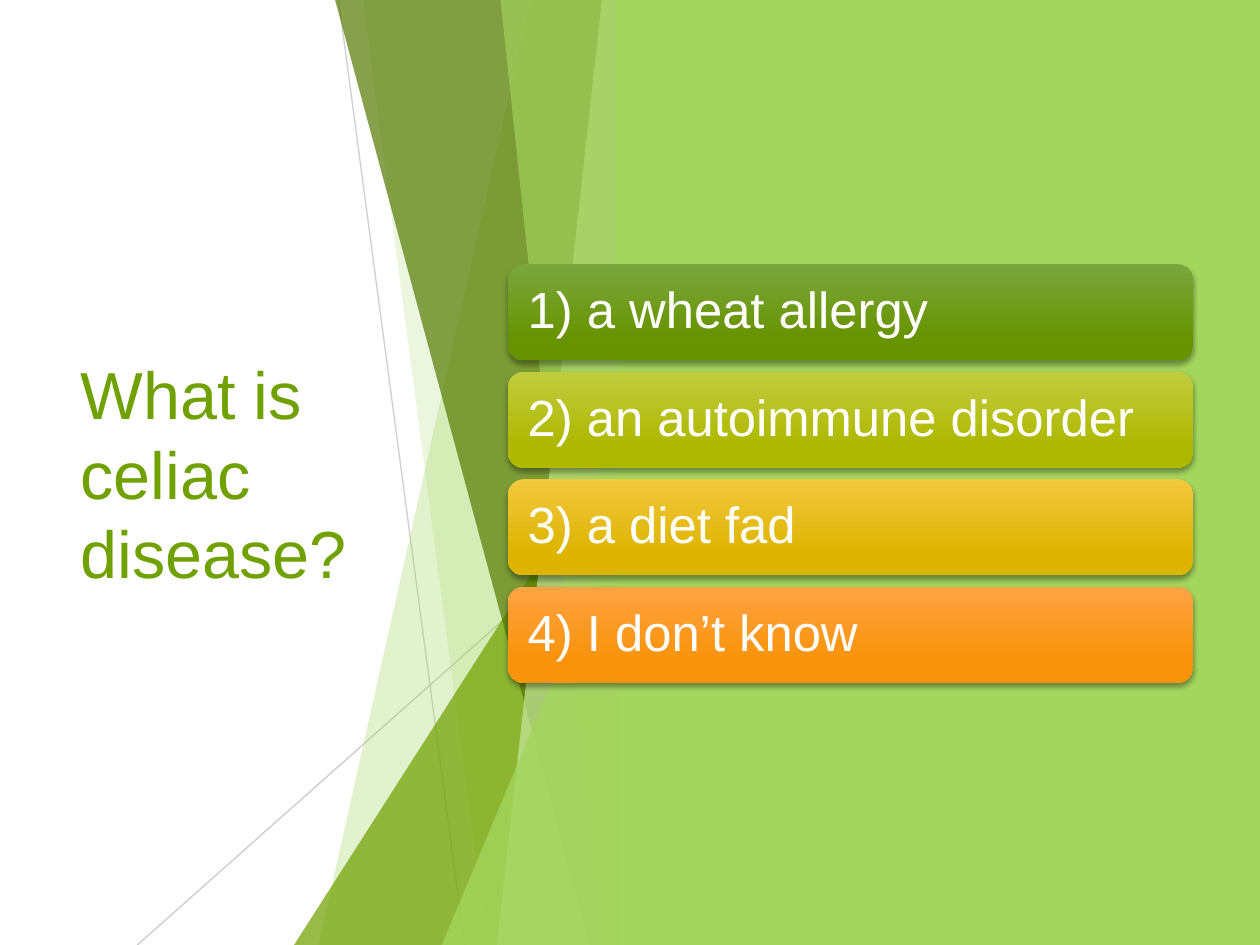
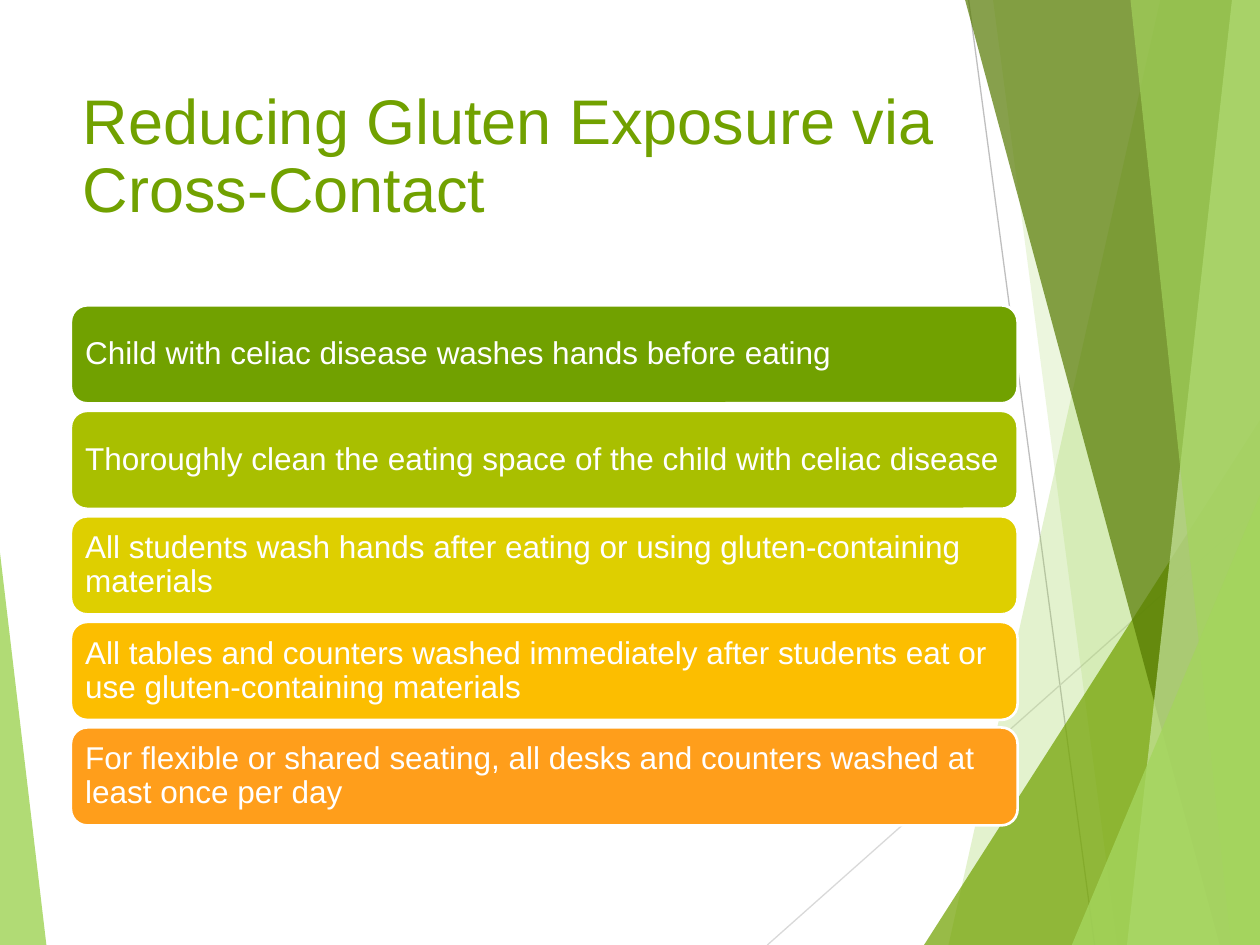
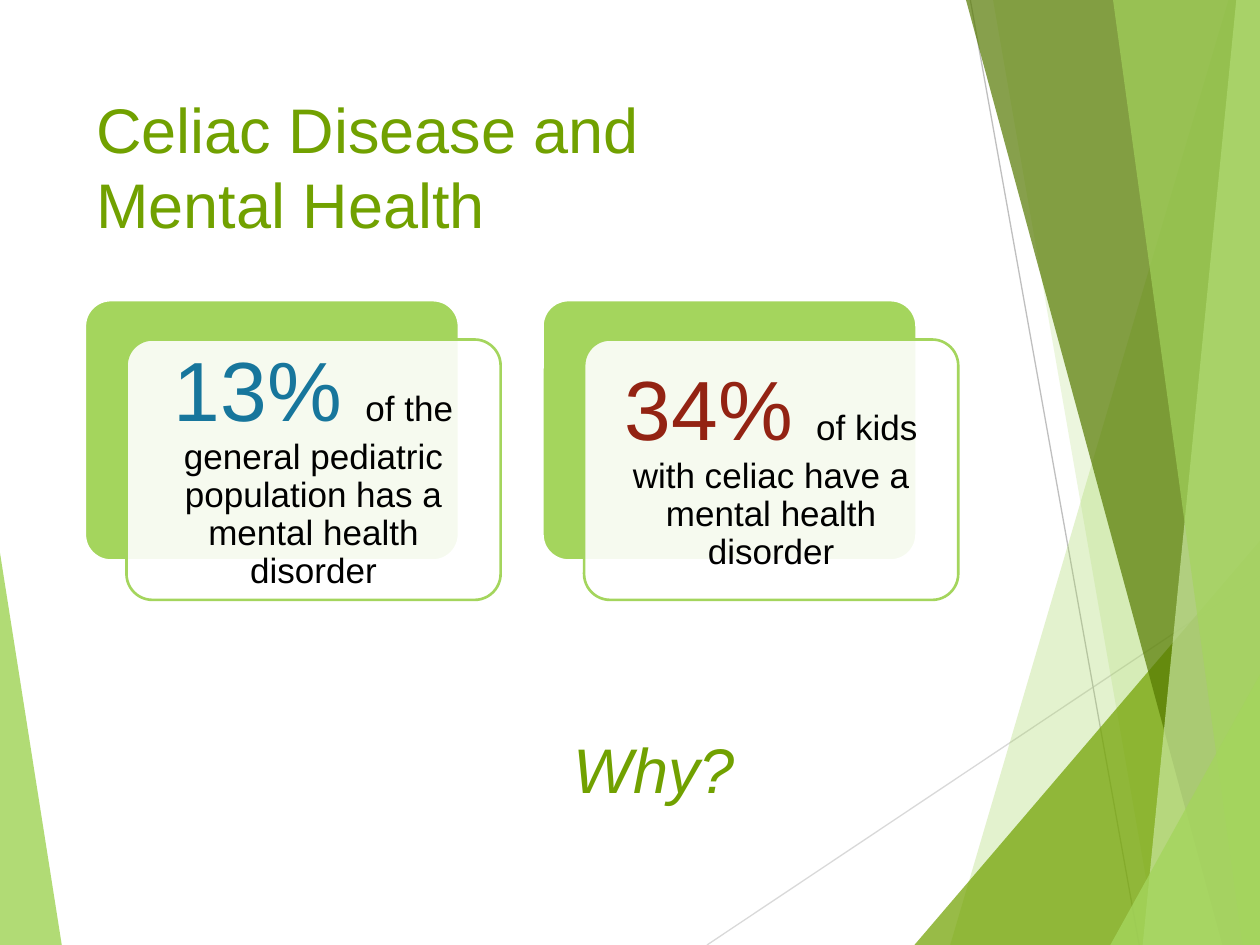
from dataclasses import dataclass
from typing import Any, Optional, Union

import pptx
import pptx.dml.color
import pptx.enum.shapes
import pptx.enum.text
import pptx.oxml
import pptx.oxml.ns
import pptx.util

Pt = pptx.util.Pt
SHAPES = pptx.enum.shapes.MSO_SHAPE
ANCHOR = pptx.enum.text.MSO_ANCHOR
ALIGN = pptx.enum.text.PP_ALIGN

COLORS = {
    "white": "FFFFFF", "black": "000000", "silver": "D9D9D9", "gray": "BFBFBF",
    "green": "71A100", "lime": "A4D55D", "pale": "C8E69E", "olive": "557900",
    "moss": "A9BF00", "yellow": "DECF00", "amber": "FCBE00", "orange": "FF9E1B",
    "blue": "17769C", "red": "932313",
    "green top": "7BA63F", "green base": "679300",
    "moss top": "C1CC3F", "moss base": "AEB800",
    "amber top": "F2C83F", "amber base": "DDB400",
    "orange top": "FFA343", "orange base": "F8930A",
}
FONT = "Arial"
WIDTH, HEIGHT = 720, 540
HALF = WIDTH / 2
DEFAULT_INSETS = (7.2, 3.6)


@dataclass(frozen=True)
class Box:
    left: float
    top: float
    width: float
    height: float

    def lengths(self, dx: float = 0) -> tuple:
        return tuple(Pt(n) for n in (self.left + dx, self.top, self.width, self.height))


@dataclass(frozen=True)
class Ray:
    start: tuple
    end: tuple
    color: str
    opacity: int = 100


@dataclass(frozen=True)
class Facet:
    points: tuple
    color: str
    opacity: int


@dataclass(frozen=True)
class Peak:
    box: Box
    apex: float
    color: str
    opacity: int


@dataclass(frozen=True)
class Span:
    text: str
    size: float
    color: str
    italic: bool = False


@dataclass(frozen=True)
class CardStack:
    first: Box
    pitch: float
    inset: float
    size: float


Part = Union[Ray, Facet, Peak]


def band(top_left: float, bottom_left: float, color: str, opacity: int) -> Facet:
    """A facet that runs from a slanted left edge to the right page edge."""
    points = ((top_left, 0), (WIDTH, 0), (WIDTH, HEIGHT), (bottom_left, HEIGHT))
    return Facet(points, color, opacity)


def facets(green: Part, lime: Part, slants: tuple) -> list[Part]:
    wide, light, dark, pale, front = slants
    return [
        band(*wide, "lime", 30), band(*light, "lime", 20), green,
        band(*dark, "olive", 70), band(*pale, "pale", 70),
        band(*front, "lime", 65), lime,
    ]


FAN = facets(
    Peak(Box(528, 240, 192, 300), 1, "green", 72),
    Peak(Box(612.5, 283, 107.5, 257), 1, "lime", 80),
    ((663, 542), (567.5, 638.5), (551.5, 697), (704, 644), (646, 703.5)),
)
EDGE_FAN = facets(
    Facet(((WIDTH, 309), (WIDTH, HEIGHT), (522.5, HEIGHT)), "green", 72),
    Facet(((WIDTH, 385.5), (WIDTH, HEIGHT), (634.5, HEIGHT)), "lime", 80),
    ((702, 543), (567.5, 661.5), (552, 698.5), (706.5, 653), (636, 710)),
)


def fan_rays(colors: tuple, opacities: tuple = (100, 100)) -> list[Part]:
    return [
        Ray((553.5, 0), (625.5, HEIGHT), colors[0], opacities[0]),
        Ray((WIDTH, 290), (438.5, HEIGHT), colors[1], opacities[1]),
    ]


QUESTION_ART = fan_rays(("gray", "gray"), (75, 80)) + FAN
CONTACT_ART = fan_rays(("gray", "silver")) + FAN + [
    Peak(Box(0, 316, 26.5, 224), 0, "lime", 85)]
HEALTH_ART = [
    Facet(((0, 316), (35.3, HEIGHT), (0, HEIGHT)), "lime", 85),
    Ray((404, HEIGHT), (WIDTH, 329), "silver"),
    Ray((554.5, 0), (651, HEIGHT), "gray"),
] + EDGE_FAN

ANSWERS = [
    ("1) a wheat allergy", "green"),
    ("2) an autoimmune disorder", "moss"),
    ("3) a diet fad", "amber"),
    ("4) I don’t know", "orange"),
]
PRECAUTIONS = [
    ("Child with celiac disease washes hands before eating", "green"),
    ("Thoroughly clean the eating space of the child with celiac disease", "moss"),
    ("All students wash hands after eating or using gluten-containing materials", "yellow"),
    ("All tables and counters washed immediately after students eat or use "
     "gluten-containing materials", "amber"),
    ("For flexible or shared seating, all desks and counters washed at least "
     "once per day", "orange"),
]
RATES = [
    ("13% ", "blue",
     "of the general pediatric population has a mental health disorder"),
    ("34% ", "red", "of kids with celiac have a mental health disorder"),
]
ANSWER_STACK = CardStack(Box(290.2, 151, 391.7, 55), 61.4, 8.7, 29)
PRECAUTION_STACK = CardStack(Box(40.5, 174.5, 541, 56), 60.3, 5.4, 18)


def rgb(name: str) -> pptx.dml.color.RGBColor:
    return pptx.dml.color.RGBColor.from_string(COLORS[name])


def apply_format(target: Any, values: dict) -> None:
    for name, value in values.items():
        setattr(target, name, value)


def set_opacity(shape: Any, parent: str, percent: int) -> None:
    """Fade the solid colour found below the given element path."""
    if percent < 100:
        color = shape._element.xpath(f"./{parent}/a:solidFill/a:srgbClr")[0]
        alpha = pptx.oxml.ns.qn("a:alpha")
        color.makeelement(alpha, {})
        pptx_alpha = pptx.oxml.parse_xml(
            f'<a:alpha {pptx.oxml.ns.nsdecls("a")} val="{percent * 1000}"/>')
        color.append(pptx_alpha)


def paint(shape: Any, color: str, opacity: int = 100, outline: Optional[str] = None) -> None:
    shape.shadow.inherit = False
    shape.fill.solid()
    shape.fill.fore_color.rgb = rgb(color)
    set_opacity(shape, "p:spPr", opacity)
    if outline:
        shape.line.color.rgb = rgb(outline)
        shape.line.width = Pt(1.5)
    else:
        shape.line.fill.background()


def paint_glossy(shape: Any, color: str) -> None:
    """Fill from a light top to a deep base, with a soft shadow below."""
    shape.line.fill.background()
    shape.fill.gradient()
    shape.fill.gradient_angle = 270
    for stop, tone, position in zip(shape.fill.gradient_stops, ("top", "base"), (0, 0.78)):
        stop.color.rgb = rgb(f"{color} {tone}")
        stop.position = position
    shape.shadow.inherit = False
    effects = shape._element.xpath("./p:spPr/a:effectLst")[0]
    effects.append(pptx.oxml.parse_xml(
        f'<a:outerShdw {pptx.oxml.ns.nsdecls("a")} blurRad="{Pt(3)}" dist="{Pt(2)}" '
        'dir="5400000" rotWithShape="0"><a:srgbClr val="000000">'
        '<a:alpha val="35000"/></a:srgbClr></a:outerShdw>'))


def draw_ray(page: Any, ray: Ray, dx: float) -> None:
    (x1, y1), (x2, y2) = ray.start, ray.end
    line = page.shapes.add_connector(
        pptx.enum.shapes.MSO_CONNECTOR.STRAIGHT,
        Pt(x1 + dx), Pt(y1), Pt(x2 + dx), Pt(y2))
    line.line.color.rgb = rgb(ray.color)
    line.line.width = Pt(0.75)
    set_opacity(line, "p:spPr/a:ln", ray.opacity)
    line._element.spPr.append(pptx.oxml.parse_xml(
        f'<a:effectLst {pptx.oxml.ns.nsdecls("a")}/>'))


def draw_art(page: Any, parts: list[Part], dx: float = 0) -> None:
    for part in parts:
        if isinstance(part, Ray):
            draw_ray(page, part, dx)
            continue
        if isinstance(part, Peak):
            shape = page.shapes.add_shape(SHAPES.ISOSCELES_TRIANGLE, *part.box.lengths(dx))
            shape.adjustments[0] = part.apex
        else:
            corners = [(Pt(x + dx), Pt(y)) for x, y in part.points]
            builder = page.shapes.build_freeform(*corners[0], scale=1.0)
            builder.add_line_segments(corners[1:], close=True)
            shape = builder.convert_to_shape()
        paint(shape, part.color, part.opacity)


def write(shape: Any, spans: list[Span], insets: tuple = DEFAULT_INSETS,
          anchor: Any = ANCHOR.MIDDLE, align: Any = ALIGN.LEFT,
          spacing: Optional[float] = None) -> None:
    side, end = (Pt(inset) for inset in insets)
    frame = shape.text_frame
    apply_format(frame, {
        "word_wrap": True, "vertical_anchor": anchor,
        "margin_left": side, "margin_right": side,
        "margin_top": end, "margin_bottom": end,
    })
    para = frame.paragraphs[0]
    apply_format(para, {"alignment": align, "line_spacing": spacing})
    for span in spans:
        for number, line in enumerate(span.text.split("\n")):
            if number:
                para.add_line_break()
            run = para.add_run()
            run.text = line
            apply_format(run.font, {
                "name": FONT, "size": Pt(span.size), "italic": span.italic})
            run.font.color.rgb = rgb(span.color)


def add_heading(page: Any, box: Box, text: str, size: float = 36,
                italic: bool = False, **layout: Any) -> None:
    heading = page.shapes.add_textbox(*box.lengths())
    layout = {"anchor": ANCHOR.TOP, **layout}
    write(heading, [Span(text, size, "green", italic)], **layout)


def add_cards(page: Any, stack: CardStack, items: list[tuple], glossy: bool) -> None:
    first = stack.first
    for row, (text, color) in enumerate(items):
        box = Box(first.left, first.top + row * stack.pitch, first.width, first.height)
        card = page.shapes.add_shape(SHAPES.ROUNDED_RECTANGLE, *box.lengths())
        if glossy:
            paint_glossy(card, color)
        else:
            paint(card, color, outline="white")
        write(card, [Span(text, stack.size, "white")],
              insets=(stack.inset, stack.inset), spacing=0.9)


def add_rate(page: Any, left: float, spans: list[Span]) -> None:
    """A white card with a rate, set off from a green card behind it."""
    layers = [(0, 171.5, "lime", 100, "white"), (23.8, 194, "white", 90, "lime")]
    for shift, top, color, opacity, outline in layers:
        box = Box(left + shift, top, 213.8, 148.8)
        card = page.shapes.add_shape(SHAPES.ROUNDED_RECTANGLE, *box.lengths())
        card.adjustments[0] = 0.1
        paint(card, color, opacity, outline)
    write(card, spans, insets=(14.4, 14.4), align=ALIGN.CENTER, spacing=0.9)


def build_question(page: Any) -> None:
    draw_art(page, QUESTION_ART, dx=-HALF)
    panel = page.shapes.add_shape(SHAPES.RECTANGLE, *Box(352.8, 0, 367.2, HEIGHT).lengths())
    paint(panel, "lime")
    add_heading(page, Box(38.8, 108.7, 209.5, 322.6), "What is celiac disease?",
                size=38, anchor=ANCHOR.MIDDLE)
    add_cards(page, ANSWER_STACK, ANSWERS, glossy=True)


def build_contact(page: Any) -> None:
    draw_art(page, CONTACT_ART)
    add_heading(page, Box(40.3, 48, 507.6, 104),
                "Reducing Gluten Exposure via Cross-Contact", spacing=0.9)
    add_cards(page, PRECAUTION_STACK, PRECAUTIONS, glossy=False)


def build_health(page: Any) -> None:
    draw_art(page, HEALTH_ART)
    add_heading(page, Box(48, 48, 500, 104), "Celiac Disease and\nMental Health")
    for column, (rate, color, text) in enumerate(RATES):
        spans = [Span(rate, 48, color), Span(text, 20, "black")]
        add_rate(page, 48.5 + column * 261.5, spans)
    add_heading(page, Box(124, 414, 500, 104), "Why?", italic=True, align=ALIGN.CENTER)


def main() -> None:
    deck = pptx.Presentation()
    apply_format(deck, {"slide_width": Pt(WIDTH), "slide_height": Pt(HEIGHT)})
    for build in (build_question, build_contact, build_health):
        build(deck.slides.add_slide(deck.slide_layouts[6]))
    deck.save("out.pptx")


if __name__ == "__main__":
    main()
